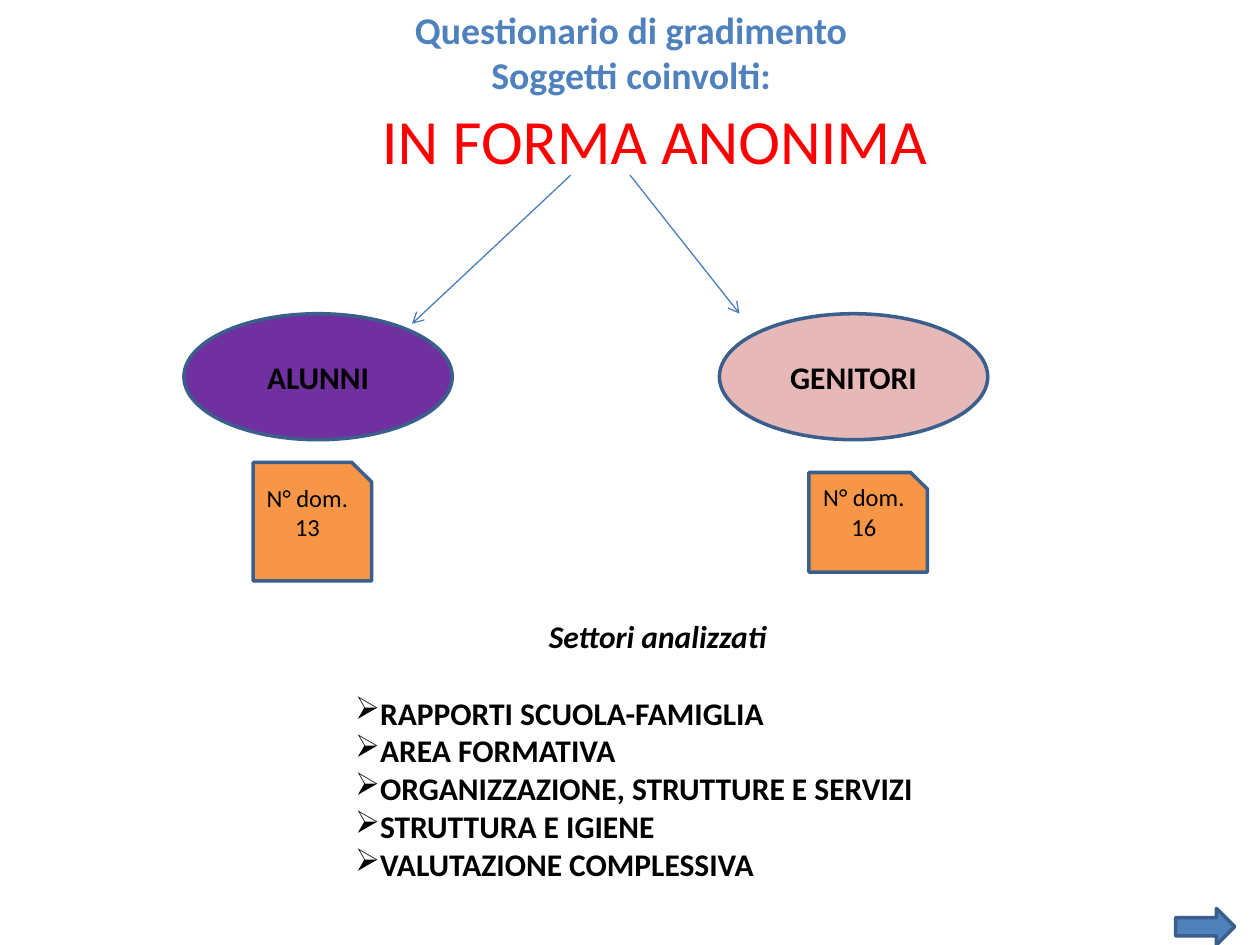
"""Build the slide on the satisfaction questionnaire and the groups involved."""
from lxml import etree
from pptx import Presentation
from pptx.dml.color import RGBColor
from pptx.enum.shapes import MSO_CONNECTOR, MSO_SHAPE
from pptx.enum.text import MSO_ANCHOR, PP_ALIGN
from pptx.oxml.ns import qn
from pptx.util import Inches, Pt

OVAL, CARD, ARROW = MSO_SHAPE.OVAL, MSO_SHAPE.SNIP_1_RECTANGLE, MSO_SHAPE.RIGHT_ARROW
STRAIGHT = MSO_CONNECTOR.STRAIGHT
TOP, MIDDLE = MSO_ANCHOR.TOP, MSO_ANCHOR.MIDDLE
CENTER, LEFT = PP_ALIGN.CENTER, PP_ALIGN.LEFT

WIDTH, HEIGHT = 10, 7.5
FONT = "Calibri"
COLORS = {
    "blue": "4F81BD", "outline": "3A5F8C", "connector": "4B7EBC", "red": "FF0000",
    "purple": "7030A0", "pink": "E6B9B8", "orange": "F79646", "black": "000000",
}

TITLE = ["Questionario di gradimento", "Soggetti coinvolti:"]
SUBTITLE = "IN FORMA ANONIMA"
GROUPS = [
    {"name": "ALUNNI", "count": "13", "fill": "purple", "left": 1.46,
     "card": (2.01, 3.67, 0.94, 0.94), "arrow": (4.53, 1.39, 3.27, 2.57)},
    {"name": "GENITORI", "count": "16", "fill": "pink", "left": 5.71,
     "card": (6.42, 3.75, 0.94, 0.79), "arrow": (5, 1.39, 5.87, 2.49)},
]
COUNT_LABEL = "N° dom."
SECTORS_HEADING = "Settori analizzati"
SECTORS = [
    "RAPPORTI SCUOLA-FAMIGLIA",
    "AREA FORMATIVA",
    "ORGANIZZAZIONE, STRUTTURE E SERVIZI",
    "STRUTTURA E IGIENE",
    "VALUTAZIONE COMPLESSIVA",
]
OVAL_TOP, OVAL_WIDTH, OVAL_HEIGHT = 2.49, 2.13, 1
BLANK_LINE = 22


def color(name):
    return RGBColor.from_string(COLORS[name])


def write(shape, lines, size, ink="black", bold=False, italic=False, align=CENTER, anchor=TOP):
    frame = shape.text_frame
    frame.word_wrap = True
    frame.vertical_anchor = anchor
    for index, line in enumerate(lines):
        paragraph = frame.add_paragraph() if index or frame.text else frame.paragraphs[0]
        paragraph.alignment = align
        run = paragraph.add_run()
        run.text = line
        run.font.name = FONT
        run.font.size = Pt(size)
        run.font.bold = bold
        run.font.italic = italic
        run.font.color.rgb = color(ink)
    return frame


def add_text(slide, box):
    return slide.shapes.add_textbox(*map(Inches, box))


def add_outlined(slide, kind, box, fill):
    shape = slide.shapes.add_shape(kind, *map(Inches, box))
    shape.shadow.inherit = False
    shape.fill.solid()
    shape.fill.fore_color.rgb = color(fill)
    shape.line.color.rgb = color("outline")
    shape.line.width = Pt(2)
    return shape


def add_arrow(slide, ends):
    connector = slide.shapes.add_connector(STRAIGHT, *map(Inches, ends))
    connector.line.color.rgb = color("connector")
    connector.line.width = Pt(0.75)
    properties = connector.line._get_or_add_ln()
    etree.SubElement(properties, qn("a:tailEnd"), type="arrow")
    etree.SubElement(properties.getparent(), qn("a:effectLst"))


def add_group(slide, group):
    oval_box = (group["left"], OVAL_TOP, OVAL_WIDTH, OVAL_HEIGHT)
    oval = add_outlined(slide, OVAL, oval_box, group["fill"])
    write(oval, [group["name"]], 18, bold=True, anchor=MIDDLE)
    card = add_outlined(slide, CARD, group["card"], "orange")
    frame = write(card, [COUNT_LABEL, group["count"]], 14, anchor=MIDDLE)
    frame.margin_bottom = Inches(0.28)
    add_arrow(slide, group["arrow"])


def add_sectors(slide):
    box = add_text(slide, (2.72, 4.85, WIDTH / 2, 2.22))
    write(box, [SECTORS_HEADING], 18, bold=True, italic=True)
    frame = write(box, SECTORS, 18, bold=True, align=LEFT)
    items = frame.paragraphs[1:]
    items[0].space_before = Pt(BLANK_LINE)
    for paragraph in items:
        properties = paragraph._p.get_or_add_pPr()
        etree.SubElement(properties, qn("a:buChar"), char="➢")


def main():
    presentation = Presentation()
    presentation.slide_width = Inches(WIDTH)
    presentation.slide_height = Inches(HEIGHT)
    slide = presentation.slides.add_slide(presentation.slide_layouts[6])
    write(add_text(slide, (0.51, 0, 9, 1.15)), TITLE, 21.6, "blue", bold=True)
    write(add_text(slide, (0.39, 0.76, 9.61, 0.7)), [SUBTITLE], 36, "red")
    for group in GROUPS:
        add_group(slide, group)
    add_outlined(slide, ARROW, (9.33, 7.21, 0.47, 0.29), "blue")
    add_sectors(slide)
    presentation.save("out.pptx")


if __name__ == "__main__":
    main()
